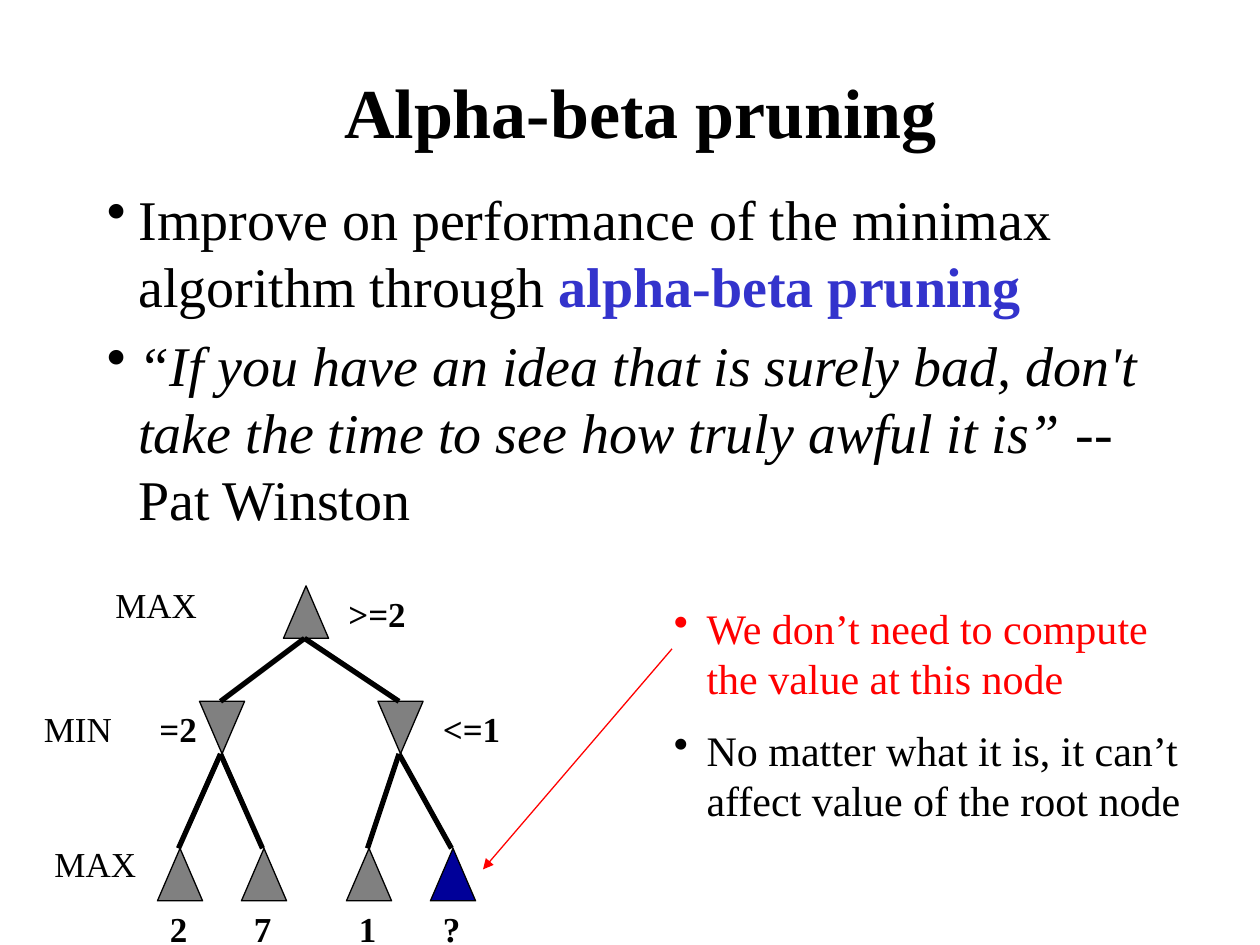
from pptx import Presentation
from pptx.dml.color import RGBColor
from pptx.enum.shapes import MSO_CONNECTOR as Connector, MSO_SHAPE as Shape
from pptx.enum.text import MSO_ANCHOR as Anchor, MSO_AUTO_SIZE as AutoSize, PP_ALIGN as Align
from pptx.oxml.ns import qn
from pptx.util import Inches, Pt
from lxml.etree import SubElement

COLORS = {"ink": "000000", "term": "3333CC", "node": "808080",
          "pruned": "000099", "alert": "FF0000"}
FONT = "Times New Roman"
COLUMNS, ROWS = 120, 90  # grid over the slide, twelve cells to the inch


class Board:
    """Slide with its style; all lengths are grid columns and rows."""

    def __init__(self, deck):
        self.slide = deck.slides.add_slide(deck.slide_layouts[6])
        self.cell_w = deck.slide_width / COLUMNS
        self.cell_h = deck.slide_height / ROWS

    def x(self, columns):
        return round(columns * self.cell_w)

    def y(self, rows):
        return round(rows * self.cell_h)

    def color(self, name):
        return RGBColor.from_string(COLORS[name])

    def frame(self, left, top, width, height, wrap=True):
        box = self.slide.shapes.add_textbox(
            self.x(left), self.y(top), self.x(width), self.y(height))
        box.text_frame.word_wrap = wrap
        return box.text_frame

    def run(self, paragraph, text, size, color="ink", bold=False, italic=False):
        run = paragraph.add_run()
        run.text = text
        font = run.font
        font.name, font.size, font.bold, font.italic = FONT, Pt(size), bold, italic
        font.color.rgb = self.color(color)

    def title(self, text, *area):
        frame = self.frame(*area)
        frame.vertical_anchor = Anchor.MIDDLE
        frame.paragraphs[0].alignment = Align.CENTER
        self.run(frame.paragraphs[0], text, 40, bold=True)

    def bullets(self, items, area, size, gap, indent):
        """Each item is a list of (text, run style) pairs; gap is a share of size."""
        frame = self.frame(*area)
        for index, item in enumerate(items):
            paragraph = frame.add_paragraph() if index else frame.paragraphs[0]
            paragraph.space_before = Pt(size * gap)
            props = paragraph._p.get_or_add_pPr()
            props.set("marL", str(Inches(indent)))
            props.set("indent", str(-Inches(indent)))
            SubElement(props, qn("a:buChar")).set("char", "•")
            for text, style in item:
                self.run(paragraph, text, size, **style)

    def label(self, text, left, top, width, bold=True):
        frame = self.frame(left, top, width, 5.2, wrap=False)
        frame.auto_size = AutoSize.SHAPE_TO_FIT_TEXT
        self.run(frame.paragraphs[0], text, 20, bold=bold)

    def node(self, left, top, fill="node", minimizer=False):
        triangle = self.slide.shapes.add_shape(
            Shape.ISOSCELES_TRIANGLE, self.x(left), self.y(top),
            self.x(NODE_W), self.y(NODE_H))
        triangle.shadow.inherit = False
        triangle.fill.solid()
        triangle.fill.fore_color.rgb = self.color(fill)
        triangle.line.color.rgb = self.color("ink")
        triangle.line.width = Pt(0.75)
        if minimizer:
            triangle._element.spPr.find(qn("a:xfrm")).set("flipV", "1")

    def line(self, start, end, color="ink", width=3, arrow=False):
        line = self.slide.shapes.add_connector(
            Connector.STRAIGHT, self.x(start[0]), self.y(start[1]),
            self.x(end[0]), self.y(end[1]))
        line.line.color.rgb = self.color(color)
        line.line.width = Pt(width)
        if arrow:
            SubElement(line.line._get_or_add_ln(), qn("a:tailEnd")).set("type", "triangle")
        SubElement(line._element.spPr, qn("a:effectLst"))

    def edge(self, parent, child):
        """Join a parent's bottom to its child's top."""
        self.line((child[0] + 2, child[1]), (parent[0] + 2, parent[1] + NODE_H))


# Game tree: left column and top row of every node
NODE_W, NODE_H = 4.3, 5
ROOT_ROW, MIN_ROW, LEAF_ROW = 55.8, 66.8, 80.8
ROOT = (27, ROOT_ROW)
# minimizer column -> its leaves as (column, value, fill)
BRANCHES = {
    19: [(15, "2", "node"), (23, "7", "node")],
    36: [(33, "1", "node"), (41, "?", "pruned")],
}


def main():
    deck = Presentation()
    deck.slide_width, deck.slide_height = Inches(10), Inches(7.5)
    board = Board(deck)

    # Title and main points
    board.title("Alpha-beta pruning", 10, 3, 102, 15)
    board.bullets([
        [("Improve on performance of the minimax algorithm through ", {}),
         ("alpha-beta pruning", {"color": "term", "bold": True})],
        [("“If you have an idea that is surely bad, don't take the time "
          "to see how truly awful it is” ", {"italic": True}),
         ("-- Pat Winston", {})],
    ], (9, 17, 102, 54), size=32, gap=0.2, indent=0.25)

    # Tree nodes, edges and leaf values
    board.node(*ROOT)
    for column, leaves in BRANCHES.items():
        minimizer = (column, MIN_ROW)
        board.node(*minimizer, minimizer=True)
        board.edge(ROOT, minimizer)
        for leaf_column, value, fill in leaves:
            leaf = (leaf_column, LEAF_ROW)
            board.node(*leaf, fill=fill)
            board.edge(minimizer, leaf)
            board.label(value, leaf_column, LEAF_ROW + NODE_H, 4.1)

    # Bounds beside the inner nodes
    board.label(">=2", 32, ROOT_ROW, 7.9)
    board.label("=2", 14, MIN_ROW, 6)
    board.label("<=1", 41, MIN_ROW, 7.9)

    # Level names
    board.label("MAX", 9.8, 55, 10.2, bold=False)
    board.label("MIN", 3, MIN_ROW, 8.9, bold=False)
    board.label("MAX", 4, 79.6, 10.2, bold=False)

    # Remark on the pruned leaf
    board.bullets([
        [("We don’t need to compute the value at this node", {"color": "alert"})],
        [("No matter what it is, it can’t affect value of the root node", {})],
    ], (63, 56.8, 53, 23), size=24, gap=0.5, indent=0.26)
    board.line((64, 61.8), (46, 82.8), color="alert", width=0.75, arrow=True)

    deck.save("out.pptx")


if __name__ == "__main__":
    main()
